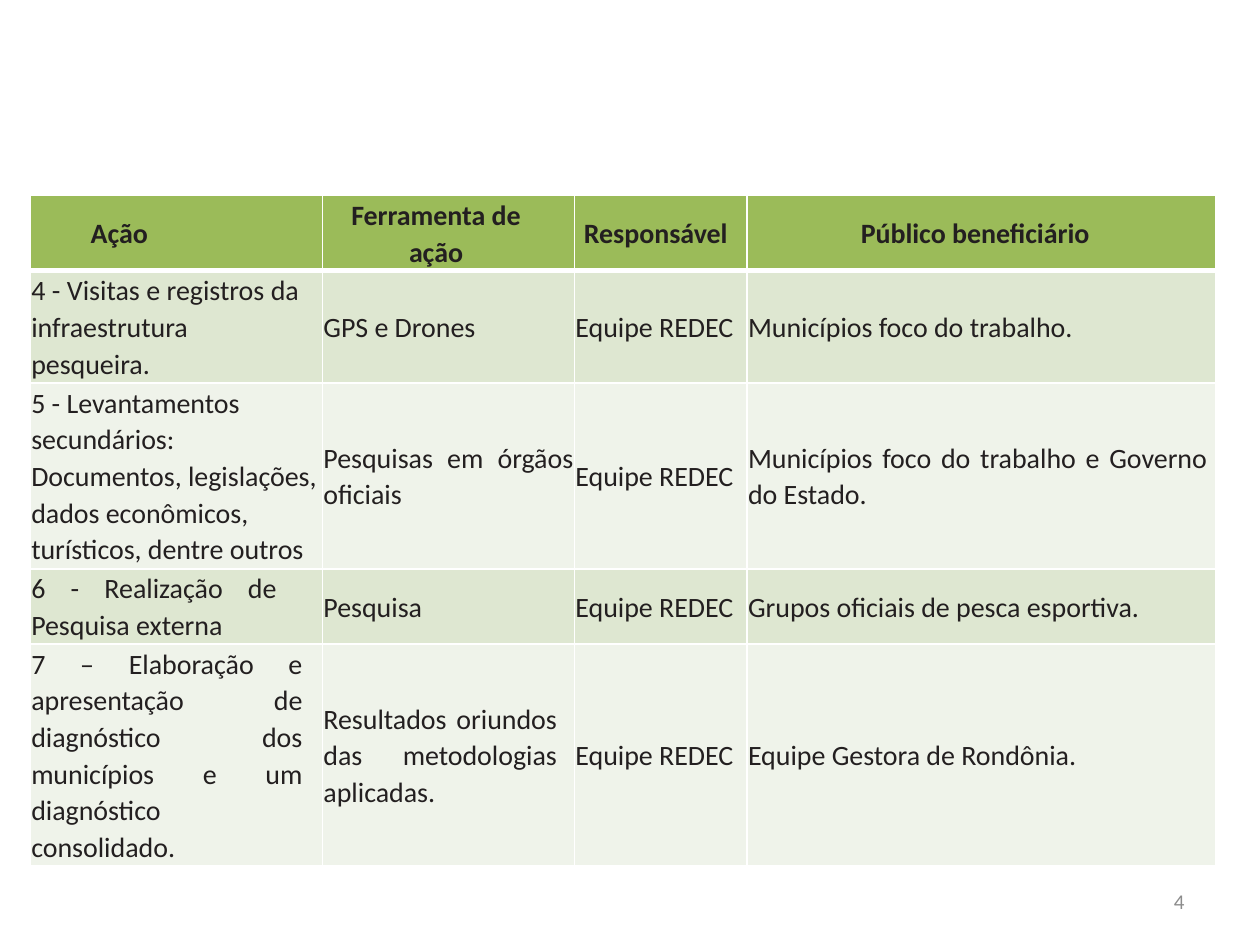
from lxml.etree import SubElement
from pptx import Presentation
from pptx.dml.color import RGBColor
from pptx.enum.text import MSO_ANCHOR as Anchor, PP_ALIGN as Align
from pptx.oxml.ns import qn
from pptx.util import Cm, Pt


def color(value):
    return RGBColor.from_string(value)


def write(frame, text, size=16, ink="231F20", bold=False, align=Align.JUSTIFY,
          line_spacing=1.07, after=8, right_indent=0):
    frame.word_wrap = True
    frame.vertical_anchor = Anchor.MIDDLE
    paragraph = frame.paragraphs[0]
    paragraph.alignment = align
    paragraph.line_spacing = line_spacing
    paragraph.space_after = Pt(after)
    if right_indent:
        paragraph._p.get_or_add_pPr().set("marR", str(Cm(right_indent)))
    run = paragraph.add_run()
    run.text = text
    run.font.name = "Calibri"
    run.font.size = Pt(size)
    run.font.bold = bold
    run.font.color.rgb = color(ink)


presentation = Presentation()
presentation.slide_width = Cm(25.4)
presentation.slide_height = Cm(19.05)
slide = presentation.slides.add_slide(presentation.slide_layouts[6])

# Each cell: text, right indent in cm
team = "Equipe REDEC"
rows = [
    [("Ação", 2.3), ("Ferramenta de ação", 0.5), ("Responsável", 0.2),
     ("Público beneficiário", 0.25)],
    [("4 - Visitas e registros da infraestrutura pesqueira.", 0.45),
     ("GPS e Drones", 0), (team, 0), ("Municípios foco do trabalho.", 0)],
    [("5 - Levantamentos secundários: Documentos, legislações, dados "
      "econômicos, turísticos, dentre outros", 0),
     ("Pesquisas em órgãos oficiais", 0), (team, 0),
     ("Municípios foco do trabalho e Governo do Estado.", 0.15)],
    [("6 - Realização de Pesquisa externa", 0.9), ("Pesquisa", 0), (team, 0),
     ("Grupos oficiais de pesca esportiva.", 0)],
    [("7 – Elaboração e apresentação de diagnóstico dos municípios e um "
      "diagnóstico consolidado.", 0.38),
     ("Resultados oriundos das metodologias aplicadas.", 0.33), (team, 0),
     ("Equipe Gestora de Rondônia.", 0)],
]
column_widths = [5.89, 5.08, 3.48, 9.45]
row_heights = [1.51, 2.26, 3.75, 1.52, 4.47]

# Action table
table = slide.shapes.add_table(
    len(rows), len(column_widths), Cm(0.61), Cm(3.94),
    Cm(sum(column_widths)), Cm(sum(row_heights))).table
for column, width in zip(table.columns, column_widths):
    column.width = Cm(width)
for row, height in zip(table.rows, row_heights):
    row.height = Cm(height)

for row_index, row in enumerate(rows):
    header = row_index == 0
    fill = "9BBB59" if header else ("EFF3EA", "DEE7D1")[row_index % 2]
    for column_index, (text, right_indent) in enumerate(row):
        cell = table.cell(row_index, column_index)
        cell.margin_left = cell.margin_right = Cm(0.02)
        cell.margin_top = cell.margin_bottom = Cm(0.02)
        if header:
            align = Align.CENTER
        elif text.startswith("5"):
            align = Align.LEFT
        else:
            align = Align.JUSTIFY
        write(cell.text_frame, text, bold=header, align=align,
              right_indent=right_indent)
        cell.vertical_anchor = Anchor.MIDDLE

        # White borders, thicker under the header; they precede the fill
        properties = cell._tc.get_or_add_tcPr()
        for side in "LRTB":
            thick = (side == "B" and row_index == 0) or (side == "T" and row_index == 1)
            line = SubElement(properties, qn(f"a:ln{side}"), w=str(Pt(3 if thick else 1)))
            SubElement(SubElement(line, qn("a:solidFill")), qn("a:srgbClr"), val="FFFFFF")
        cell.fill.solid()
        cell.fill.fore_color.rgb = color(fill)

# Slide number
number_box = slide.shapes.add_textbox(Cm(18.2), Cm(17.65), Cm(5.93), Cm(1.02))
write(number_box.text_frame, "4", size=12, ink="8C8C8C", align=Align.RIGHT,
      line_spacing=1, after=0)

presentation.save("out.pptx")
